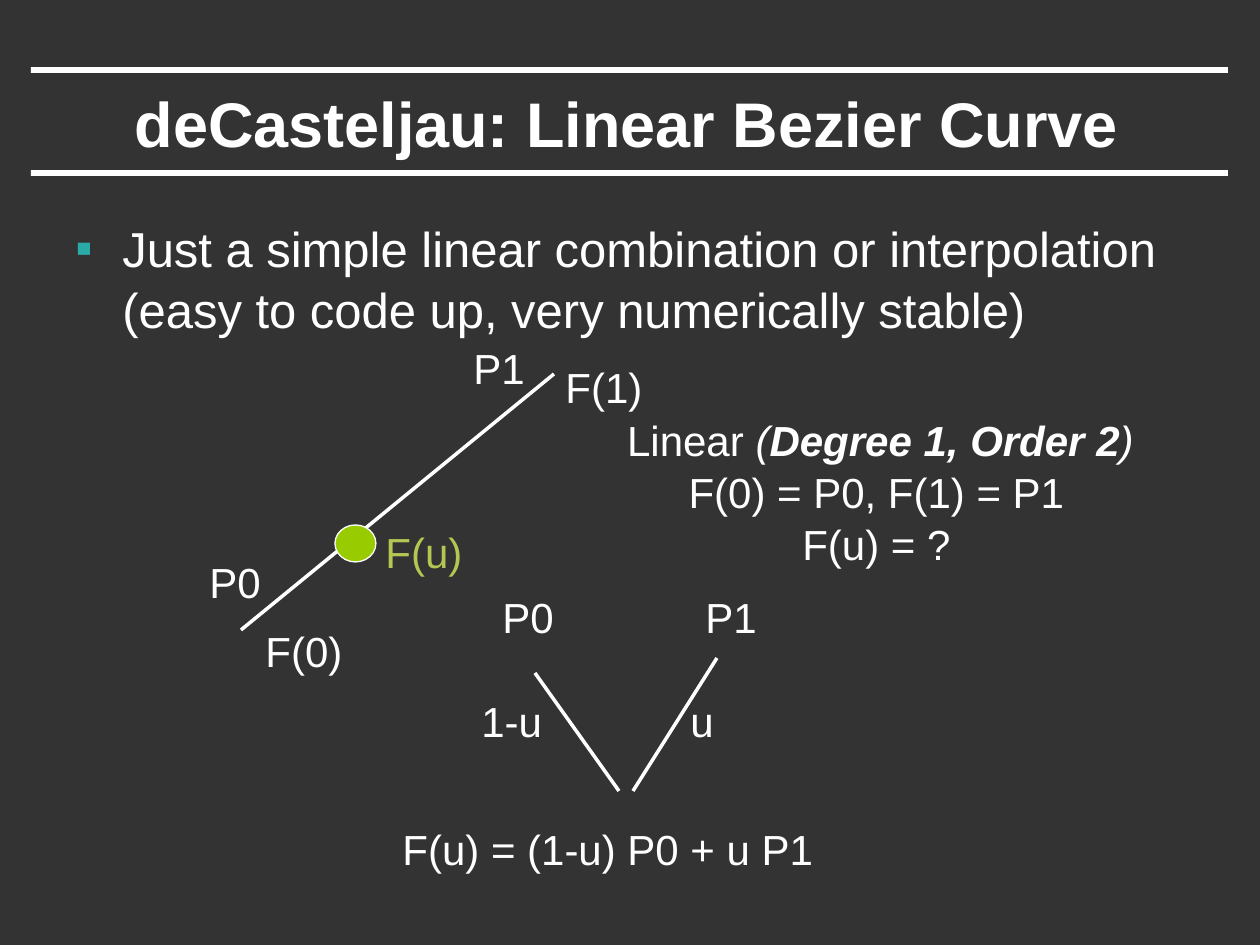
from lxml import etree
from pptx import Presentation
from pptx import util as u
from pptx.dml.color import RGBColor
from pptx.enum import shapes, text
from pptx.oxml.ns import qn

PX = 9144000 // 1260
WHITE, GREEN, OLIVE, TEAL, DARK = "FFFFFF", "99CC00", "B4C753", "2AABA8", "333333"
LEFT, CENTER = text.PP_ALIGN.LEFT, text.PP_ALIGN.CENTER
LINE_SPACING = 1.04

TITLE = "deCasteljau: Linear Bezier Curve"
BULLET = ("Just a simple linear combination or interpolation "
          "(easy to code up, very numerically stable)")
RULE_TOPS = (67, 170)

# Each paragraph is a list of (text, style) spans.
FACTS = [
    [(" ", {"size": 18, "font": "Times New Roman"}), ("Linear ", {}),
     ("(", {"italic": True}),
     ("Degree 1, Order 2", {"italic": True, "bold": True}),
     (")", {"italic": True})],
    [("F(0) = P0, F(1) = P1", {})],
    [("F(u) = ?", {})],
]

# Labels: text, left, top, width, alignment, colour
CURVE_LABELS = [
    ("P0", 197, 548, 77, LEFT, WHITE),
    ("P1", 461, 334, 77, LEFT, WHITE),
    ("F(0)", 253, 617, 102, CENTER, WHITE),
    ("F(u)", 373, 518, 102, CENTER, OLIVE),
    ("F(1)", 553, 353, 102, CENTER, WHITE),
]
TREE_LABELS = [
    ("P0", 490, 583, 77, LEFT, WHITE),
    ("P1", 693, 583, 77, LEFT, WHITE),
    ("1-u", 469, 687, 86, LEFT, WHITE),
    ("u", 678, 687, 49, LEFT, WHITE),
    ("F(u) = (1-u) P0 + u P1", 390, 815, 436, LEFT, WHITE),
]
LABEL_HEIGHT = 63

# Lines: x1, y1, x2, y2
CURVE = (241, 630, 554, 374)
TREE_BRANCHES = [(535, 673, 619, 791), (717, 658, 633, 791)]
CURVE_POINT = (335, 525, 41, 37)


def px(*lengths):
    return [u.Emu(length * PX) for length in lengths]


def colour(value):
    return RGBColor.from_string(value)


def style(span, size=24, font="Arial", color=WHITE, bold=False, italic=False):
    span.font.size = u.Pt(size)
    span.font.name = font
    span.font.color.rgb = colour(color)
    span.font.bold = bold
    span.font.italic = italic


def add_text(parent, place, paragraphs, align=LEFT, wrap=True):
    """Add a text box of paragraphs, each a list of (text, style) spans."""
    box = parent.add_textbox(*px(*place))
    frame = box.text_frame
    frame.word_wrap = wrap
    for index, spans in enumerate(paragraphs):
        para = frame.paragraphs[0] if index == 0 else frame.add_paragraph()
        para.alignment = align
        para.line_spacing = LINE_SPACING
        for words, look in spans:
            span = para.add_run()
            span.text = words
            style(span, **look)
    return box


def add_labels(parent, labels):
    for words, left, top, width, align, color in labels:
        add_text(parent, (left, top, width, LABEL_HEIGHT),
                 [[(words, {"color": color})]], align, wrap=False)


def add_line(parent, ends):
    line = parent.add_connector(shapes.MSO_CONNECTOR.STRAIGHT, *px(*ends))
    line.line.color.rgb = colour(WHITE)
    line.line.width = u.Pt(2)
    etree.SubElement(line._element.spPr, qn("a:effectLst"))


def add_filled(parent, kind, place, fill):
    shape = parent.add_shape(kind, *px(*place))
    shape.shadow.inherit = False
    shape.fill.solid()
    shape.fill.fore_color.rgb = colour(fill)
    shape.line.fill.background()
    return shape


def add_bullet(para, mark, color, indent):
    props = para._p.get_or_add_pPr()
    props.set("marL", str(indent * PX))
    props.set("indent", str(-indent * PX))
    bullet_colour = etree.SubElement(props, qn("a:buClr"))
    etree.SubElement(bullet_colour, qn("a:srgbClr"), val=color)
    etree.SubElement(props, qn("a:buFont"), typeface="Arial")
    etree.SubElement(props, qn("a:buChar"), char=mark)


def main():
    deck = Presentation()
    deck.slide_width, deck.slide_height = px(1260, 945)
    page = deck.slides.add_slide(deck.slide_layouts[6])
    page.background.fill.solid()
    page.background.fill.fore_color.rgb = colour(DARK)
    items = page.shapes

    for top in RULE_TOPS:
        add_filled(items, shapes.MSO_SHAPE.RECTANGLE, (31, top, 1197, 6), WHITE)

    title = add_text(items, (93, 73, 1067, 95),
                     [[(TITLE, {"size": 36, "bold": True})]], CENTER)
    title.text_frame.vertical_anchor = text.MSO_ANCHOR.MIDDLE

    body = add_text(items, (63, 210, 1134, 693), [[(BULLET, {"size": 28})]])
    add_bullet(body.text_frame.paragraphs[0], "▪", TEAL, 47)

    add_text(items, (600, 406, 553, 164), FACTS, CENTER)

    add_line(items, CURVE)
    tree = items.add_group_shape().shapes
    add_labels(tree, TREE_LABELS)
    for branch in TREE_BRANCHES:
        add_line(tree, branch)

    point = add_filled(items, shapes.MSO_SHAPE.OVAL, CURVE_POINT, GREEN)
    point.line.color.rgb = colour(WHITE)
    point.line.width = u.Pt(0.75)
    add_labels(items, CURVE_LABELS)

    deck.save("out.pptx")


if __name__ == "__main__":
    main()
